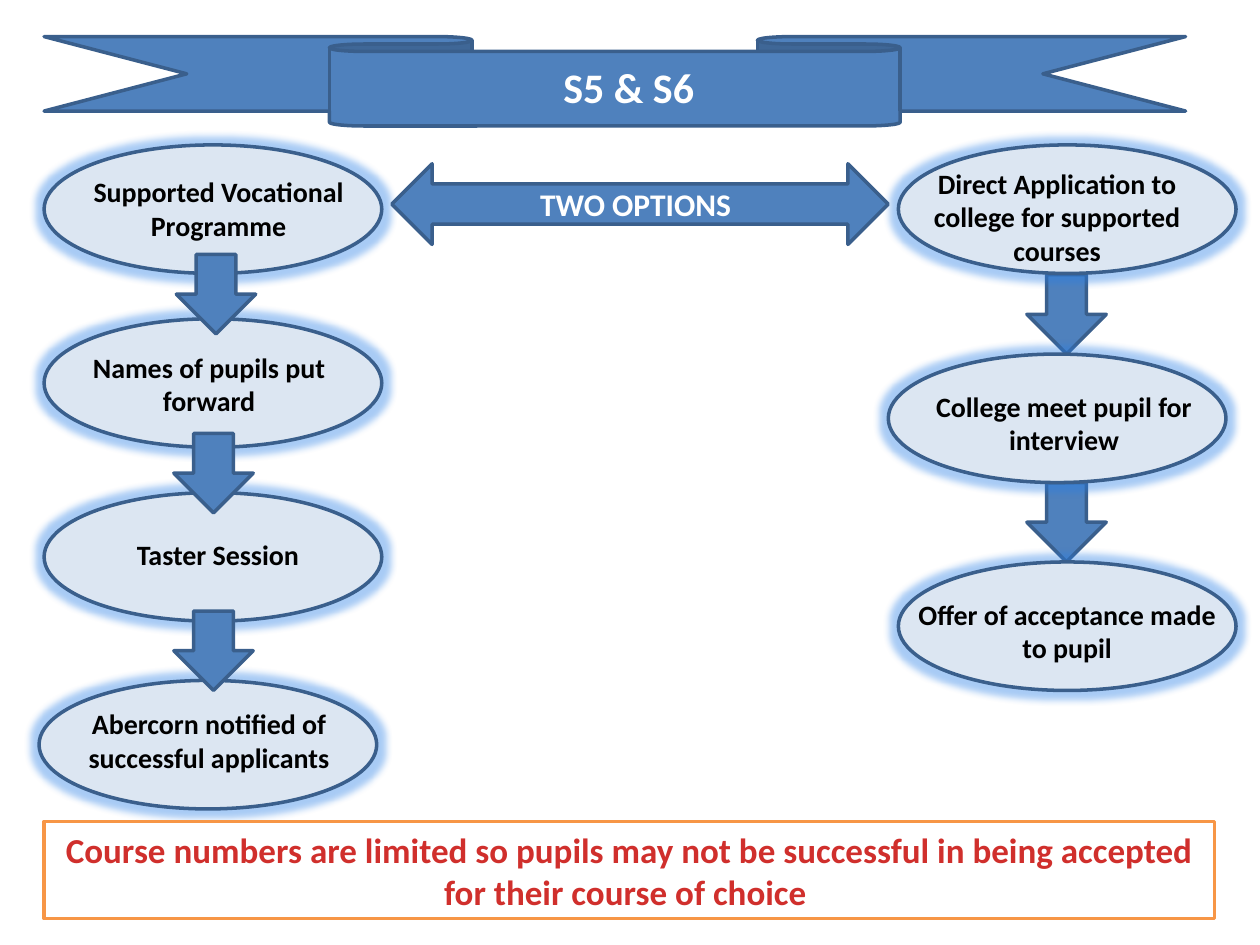
from pptx import Presentation
from pptx.dml.color import RGBColor
from pptx.enum.shapes import MSO_SHAPE
from pptx.enum.text import MSO_ANCHOR, PP_ALIGN
from pptx.oxml import parse_xml
from pptx.oxml.ns import nsdecls, qn
from pptx.util import Inches, Pt

RIBBON = MSO_SHAPE.DOWN_RIBBON
OVAL = MSO_SHAPE.OVAL
DOWN_ARROW = MSO_SHAPE.DOWN_ARROW
DOUBLE_ARROW = MSO_SHAPE.LEFT_RIGHT_ARROW
RECTANGLE = MSO_SHAPE.RECTANGLE
CENTER = PP_ALIGN.CENTER
TOP, MIDDLE = MSO_ANCHOR.TOP, MSO_ANCHOR.MIDDLE

BLUE = RGBColor(0x4F, 0x81, 0xBD)
DARK_BLUE = RGBColor(0x3A, 0x5F, 0x8C)
PALE_BLUE = RGBColor(0xDC, 0xE6, 0xF2)
ORANGE = RGBColor(0xF7, 0x96, 0x46)
RED = RGBColor(0xD0, 0x2F, 0x2C)
WHITE = RGBColor(0xFF, 0xFF, 0xFF)
BLACK = RGBColor(0x00, 0x00, 0x00)

OVAL_SIZE = (2.68, 1.02)
ARROW_SIZE = (0.63, 0.63)
LEFT_OVALS = [(0.35, 1.15), (0.35, 2.53), (0.35, 3.91), (0.31, 5.4)]
RIGHT_OVALS = [(7.13, 1.15), (7.05, 2.81), (7.13, 4.46)]
LEFT_ARROWS = [(1.4, 2.02), (1.38, 3.44), (1.38, 4.85)]
RIGHT_ARROWS = [(8.15, 2.18), (8.15, 3.83)]
LABELS = [
    ("Supported Vocational Programme", (0.12, 1.34, 3.23, 0.64)),
    ("Names of pupils put forward", (0.28, 2.73, 2.76, 0.64)),
    ("Taster Session", (0.35, 4.22, 2.76, 0.37)),
    ("Abercorn notified of successful applicants", (0.28, 5.56, 2.76, 0.64)),
    ("Direct Application to college for supported courses", (7.05, 1.27, 2.68, 0.91)),
    ("College meet pupil for interview", (7.24, 3.04, 2.41, 0.64)),
    ("Offer of acceptance made to pupil", (7.13, 4.69, 2.68, 0.64)),
]


class FlowSlide:
    """Draws the elements of the options flow chart in one style."""

    def __init__(self, page, font="Calibri"):
        self.page = page
        self.font = font

    def set_text(self, shape, text, size, color, anchor=TOP):
        frame = shape.text_frame
        frame.word_wrap = True
        frame.vertical_anchor = anchor
        para = frame.paragraphs[0]
        para.alignment = CENTER
        span = para.add_run()
        span.text = text
        for name, value in {"name": self.font, "size": Pt(size), "bold": True}.items():
            setattr(span.font, name, value)
        span.font.color.rgb = color

    def title(self, text, bounds):
        title = self.page.shapes.title
        for name, value in zip(("left", "top", "width", "height"), bounds):
            setattr(title, name, Inches(value))
        self.set_text(title, text, 24, WHITE, MIDDLE)
        return title

    def label(self, text, bounds, size=16, color=BLACK):
        box = self.page.shapes.add_textbox(*map(Inches, bounds))
        self.set_text(box, text, size, color)

    def shape(self, kind, bounds, fill=BLUE, line=DARK_BLUE):
        shape = self.page.shapes.add_shape(kind, *map(Inches, bounds))
        shape.shadow.inherit = False
        shape.fill.solid()
        shape.fill.fore_color.rgb = fill
        shape.line.color.rgb = line
        shape.line.width = Pt(2)
        return shape

    def glowing_oval(self, position):
        oval = self.shape(OVAL, position + OVAL_SIZE, PALE_BLUE)
        effects = oval.element.spPr.find(qn("a:effectLst"))
        effects.append(parse_xml(
            f'<a:glow {nsdecls("a")} rad="{Pt(8)}"><a:srgbClr val="{BLUE}">'
            '<a:satMod val="175000"/><a:alpha val="40000"/></a:srgbClr></a:glow>'))

    def arrow(self, position):
        self.shape(DOWN_ARROW, position + ARROW_SIZE)


def main():
    deck = Presentation()
    deck.slide_width, deck.slide_height = Inches(10), Inches(7.5)
    flow = FlowSlide(deck.slides.add_slide(deck.slide_layouts[5]))

    title = flow.title("S5 & S6", (3.61, 0.44, 2.76, 0.5))
    ribbon = flow.shape(RIBBON, (0.35, 0.29, 9.06, 0.71))
    title.element.addprevious(ribbon.element)

    for position in LEFT_OVALS:
        flow.glowing_oval(position)
    for position in LEFT_ARROWS + RIGHT_ARROWS:
        flow.arrow(position)
    for position in RIGHT_OVALS:
        flow.glowing_oval(position)
    for text, bounds in LABELS:
        flow.label(text, bounds)

    notice = flow.shape(RECTANGLE, (0.35, 6.52, 9.29, 0.77), WHITE, ORANGE)
    flow.set_text(notice, "Course numbers are limited so pupils may not be successful "
                  "in being accepted for their course of choice ", 20, RED, MIDDLE)

    flow.shape(DOUBLE_ARROW, (3.11, 1.3, 3.94, 0.64))
    flow.label("TWO OPTIONS", (3.43, 1.42, 3.23, 0.4), 18, WHITE)
    deck.save("out.pptx")


if __name__ == "__main__":
    main()
